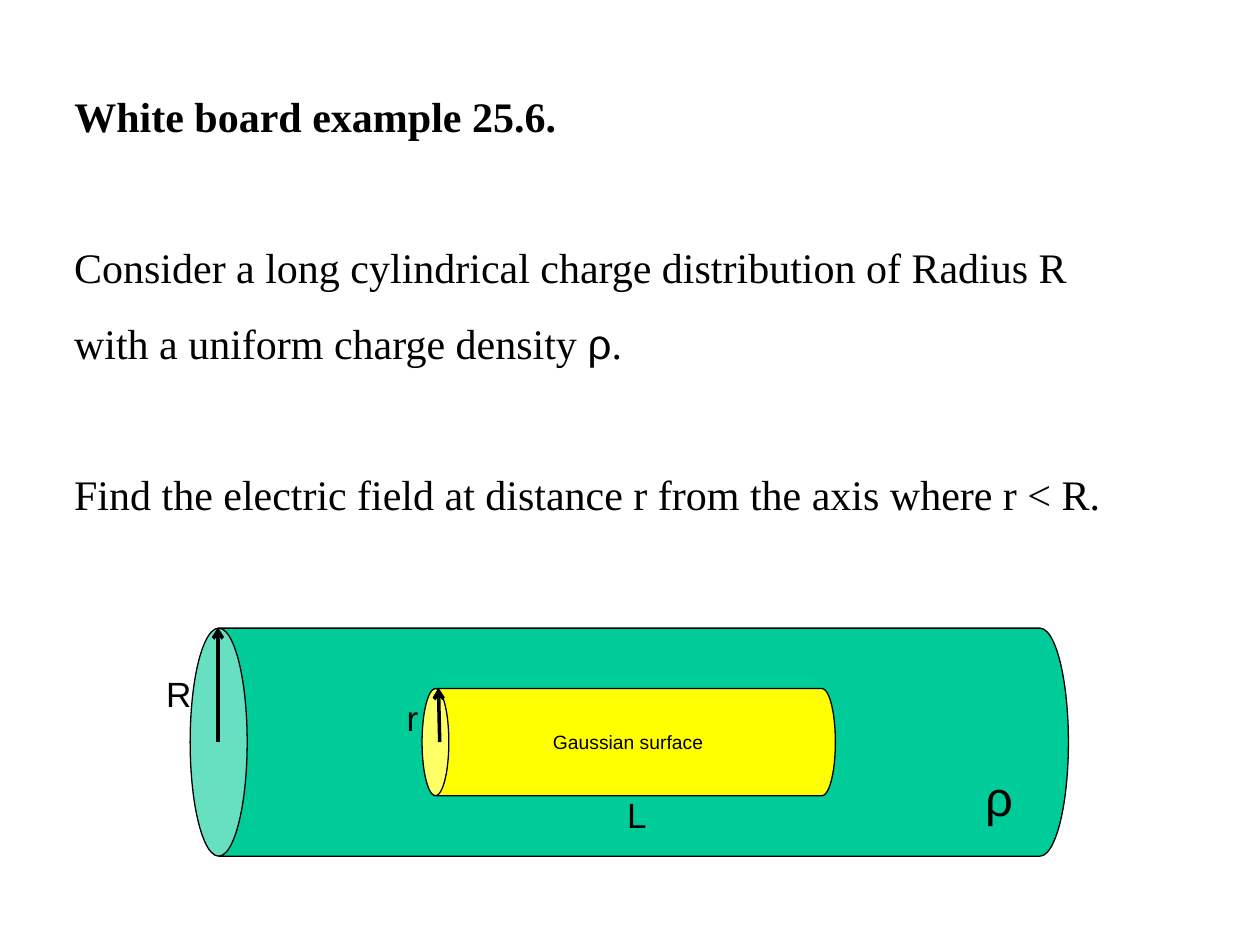
from lxml.etree import SubElement
from pptx import Presentation
from pptx.dml.color import RGBColor
from pptx.enum.shapes import MSO_CONNECTOR, MSO_SHAPE
from pptx.enum.text import MSO_ANCHOR, PP_ALIGN
from pptx.oxml.ns import qn
from pptx.util import Inches, Pt

COLORS = {"ink": "000000", "charge": "00CC99", "gaussian": "FFFF00"}
SERIF, SANS = "Times New Roman", "Arial"

HEADING = "White board example 25.6."
PROBLEM = [
    [("Consider a long cylindrical charge distribution of Radius R "
      "with a uniform charge density ", SERIF), ("ρ", SANS), (".", SERIF)],
    [("Find the electric field at distance r from the axis where r < R.", SERIF)],
]
TEXT_LEFT, TEXT_WIDTH = 0.49, 8.7
HEADING_TOP, LINE_PITCH = 0.47, 0.6

AXIS_Y = 5.89
# left, length, diameter, colour
CYLINDERS = [(1.51, 6.97, 1.81, "charge"), (3.35, 3.28, 0.85, "gaussian")]
# start x, end x, end y
RADII = [(1.73, 1.73, 4.98), (3.49, 3.48, 5.46)]
# text, left, top, width, height, size
LABELS = [
    ("R", 1.22, 5.29, 0.44, 0.44, 20),
    ("r", 3.13, 5.48, 0.44, 0.44, 20),
    ("L", 4.88, 6.25, 0.44, 0.44, 20),
    ("Gaussian surface", 4.29, 5.75, 1.82, 0.29, 11),
    ("ρ", 7.72, 6.04, 0.63, 0.57, 28),
]


def color(name):
    return RGBColor.from_string(COLORS[name])


def style(font, size, face=None, bold=False):
    font.size, font.bold = Pt(size), bold
    font.color.rgb = color("ink")
    if face:
        font.name = face


def add_heading(slide):
    title = slide.shapes.title
    title.left, title.top = Inches(TEXT_LEFT), Inches(HEADING_TOP)
    title.width, title.height = Inches(TEXT_WIDTH), Inches(LINE_PITCH + 0.1)
    title.text_frame.vertical_anchor = MSO_ANCHOR.TOP
    title.text_frame.text = HEADING
    paragraph = title.text_frame.paragraphs[0]
    paragraph.alignment = PP_ALIGN.LEFT
    paragraph.line_spacing = 1.5
    style(paragraph.font, 24, SERIF, bold=True)


def add_problem(slide):
    box = slide.shapes.add_textbox(
        Inches(TEXT_LEFT), Inches(HEADING_TOP + 2 * LINE_PITCH),
        Inches(TEXT_WIDTH), Inches(4 * LINE_PITCH + 0.1))
    frame = box.text_frame
    frame.word_wrap = True
    for index, runs in enumerate(PROBLEM):
        paragraph = frame.add_paragraph() if index else frame.paragraphs[0]
        paragraph.line_spacing = 1.5
        if index:
            paragraph.space_before = Inches(LINE_PITCH)
        style(paragraph.font, 24)
        for text, face in runs:
            run = paragraph.add_run()
            run.text, run.font.name = text, face


def add_cylinder(slide, left, length, diameter, fill):
    """Lay an upright can on its side, centred on the axis."""
    can = slide.shapes.add_shape(
        MSO_SHAPE.CAN, Inches(left + (length - diameter) / 2),
        Inches(AXIS_Y - length / 2), Inches(diameter), Inches(length))
    can.rotation = 270
    can.shadow.inherit = False
    can.fill.solid()
    can.fill.fore_color.rgb = color(fill)
    can.line.color.rgb = color("ink")
    can.line.width = Pt(0.75)


def add_radius(slide, start_x, end_x, end_y):
    arrow = slide.shapes.add_connector(
        MSO_CONNECTOR.STRAIGHT, Inches(start_x), Inches(AXIS_Y),
        Inches(end_x), Inches(end_y))
    arrow.line.color.rgb = color("ink")
    arrow.line.width = Pt(2)
    SubElement(arrow.line._get_or_add_ln(), qn("a:tailEnd"), type="arrow")
    SubElement(arrow._element.spPr, qn("a:effectLst"))


def add_label(slide, text, left, top, width, height, size):
    box = slide.shapes.add_textbox(*map(Inches, (left, top, width, height)))
    box.text_frame.word_wrap = True
    box.text_frame.text = text
    style(box.text_frame.paragraphs[0].font, size, SANS)


def main():
    deck = Presentation()
    deck.slide_width, deck.slide_height = Inches(10), Inches(7.5)
    slide = deck.slides.add_slide(deck.slide_layouts[5])
    add_heading(slide)
    add_problem(slide)
    for add, parts in ((add_cylinder, CYLINDERS), (add_radius, RADII),
                       (add_label, LABELS)):
        for part in parts:
            add(slide, *part)
    deck.save("out.pptx")


if __name__ == "__main__":
    main()
